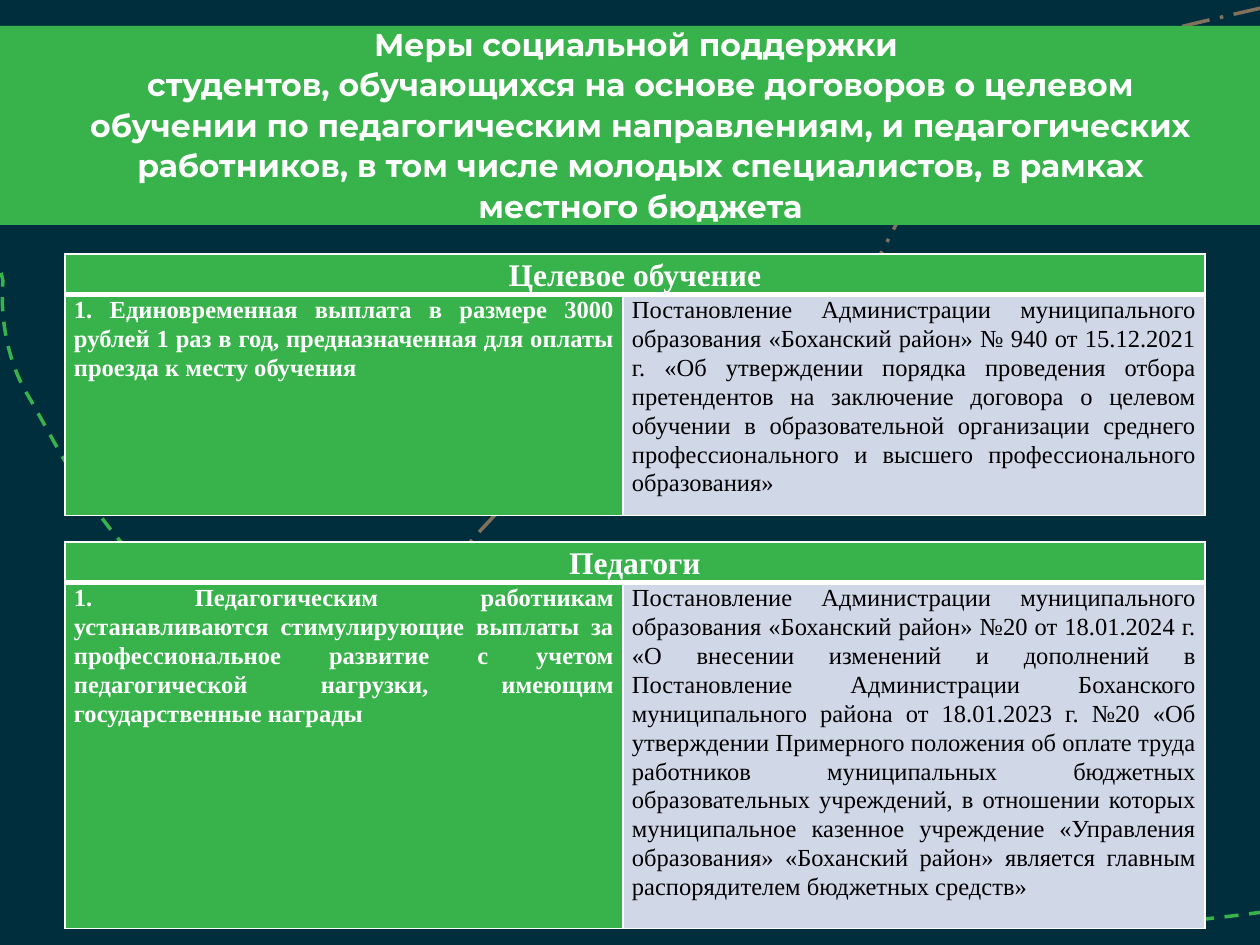
"""Build the slide on support measures for students and teachers."""
from dataclasses import dataclass
from math import cos, radians, sin

from lxml.etree import SubElement
from pptx import Presentation
from pptx.dml.color import RGBColor
from pptx.enum.dml import MSO_LINE
from pptx.enum.shapes import MSO_SHAPE
from pptx.enum.text import MSO_ANCHOR, MSO_AUTO_SIZE, PP_ALIGN
from pptx.oxml.ns import qn
from pptx.shapes.autoshape import Shape
from pptx.slide import Slide
from pptx.table import _Cell as Cell
from pptx.text.text import TextFrame
from pptx.util import Emu, Pt

Point = tuple[float, float]

NAVY = RGBColor(0x00, 0x2E, 0x3D)
GREEN = RGBColor(0x38, 0xB3, 0x4B)
BROWN = RGBColor(0x80, 0x71, 0x5C)
PALE = RGBColor(0xD0, 0xD8, 0xE8)
WHITE = RGBColor(0xFF, 0xFF, 0xFF)
BLACK = RGBColor(0x00, 0x00, 0x00)
SERIF = "Times New Roman"
COLUMNS = (558, 582)
TABLE_LEFT = 65
HEADER_HEIGHT = 40


@dataclass(frozen=True)
class Trail:
    """A dashed chain of Bezier curves, with the turn of its frame."""
    points: tuple[Point, ...]
    color: RGBColor
    dash: MSO_LINE
    turn: float = 0


@dataclass(frozen=True)
class Support:
    """A group of people, its measure and the legal ground."""
    top: int
    body_height: int
    group: str
    measure: str
    ground: str


@dataclass(frozen=True)
class TextStyle:
    """How the text of a box or cell looks."""
    font: str
    size: int
    color: RGBColor
    bold: bool
    align: PP_ALIGN


TITLE_STYLE = TextStyle("Montserrat", 18, WHITE, True, PP_ALIGN.CENTER)
GROUP_STYLE = TextStyle(SERIF, 18, WHITE, True, PP_ALIGN.CENTER)
MEASURE_STYLE = TextStyle(SERIF, 14, WHITE, True, PP_ALIGN.JUSTIFY)
GROUND_STYLE = TextStyle(SERIF, 14, BLACK, False, PP_ALIGN.JUSTIFY)

TITLE = (
    "Меры социальной поддержки \n"
    "студентов, обучающихся на основе договоров о целевом обучении по "
    "педагогическим направлениям, и педагогических работников, в том числе "
    "молодых специалистов, в рамках местного бюджета"
)
TRAILS = (
    Trail(((1261, 8), (1157, 32), (1052, 54), (978, 110), (905, 165), (888, 280),
           (818, 338), (747, 397), (621, 418), (556, 462), (490, 507), (423, 601),
           (423, 601)), BROWN, MSO_LINE.LONG_DASH_DOT, 93.8),
    Trail(((1263, 912), (1172, 924), (1080, 934), (990, 903), (901, 872), (809, 771),
           (725, 727), (641, 682), (576, 656), (486, 634), (396, 612), (261, 635),
           (184, 595), (107, 554), (57, 444), (26, 392), (-4, 339), (3, 281),
           (3, 281), (-1, 262), (0, 277), (0, 277)), GREEN, MSO_LINE.DASH),
)
SUPPORTS = (
    Support(
        254, 221, "Целевое обучение",
        "1. Единовременная выплата в размере 3000 рублей 1 раз в год, "
        "предназначенная для оплаты проезда к месту обучения",
        "Постановление Администрации муниципального образования «Боханский район» "
        "№ 940 от 15.12.2021 г. «Об утверждении порядка проведения отбора "
        "претендентов на заключение договора о целевом обучении в образовательной "
        "организации среднего профессионального и высшего профессионального "
        "образования»"),
    Support(
        542, 346, "Педагоги",
        "1. Педагогическим работникам устанавливаются стимулирующие выплаты за "
        "профессиональное развитие с учетом педагогической нагрузки, имеющим "
        "государственные награды",
        "Постановление Администрации муниципального образования «Боханский район» "
        "№20 от 18.01.2024 г. «О внесении изменений и дополнений в Постановление "
        "Администрации Боханского муниципального района от 18.01.2023 г. №20 «Об "
        "утверждении Примерного положения об оплате труда работников муниципальных "
        "бюджетных образовательных учреждений, в отношении которых муниципальное "
        "казенное учреждение «Управления образования» «Боханский район» является "
        "главным распорядителем бюджетных средств»"),
)


def px(length: float) -> Emu:
    """Turn pixels into EMU."""
    return Emu(round(length * 914400 / 126))


def write(frame: TextFrame, text: str, style: TextStyle) -> None:
    """Put styled text into a frame."""
    frame.text = text
    for paragraph in frame.paragraphs:
        paragraph.alignment = style.align
        paragraph.line_spacing = 1.07
        for run in paragraph.runs:
            run.font.name = style.font
            run.font.size = Pt(style.size)
            run.font.bold = style.bold
            run.font.color.rgb = style.color


def rotate(point: Point, degrees: float) -> Point:
    """Rotate a point about the slide corner."""
    x, y = point
    cosine, sine = cos(radians(degrees)), sin(radians(degrees))
    return x * cosine - y * sine, x * sine + y * cosine


def bend(outline: Shape) -> None:
    """Turn every three line segments into one cubic curve."""
    segments = list(outline.element.iter(qn("a:lnTo")))
    for start in range(0, len(segments), 3):
        cubic = SubElement(segments[start].getparent(), qn("a:cubicBezTo"))
        for segment in segments[start:start + 3]:
            cubic.append(segment[0])
            segment.getparent().remove(segment)


def draw_trail(slide: Slide, trail: Trail) -> None:
    """Draw a dashed trail."""
    first, *rest = [tuple(map(px, rotate(point, -trail.turn))) for point in trail.points]
    builder = slide.shapes.build_freeform(*first)
    builder.add_line_segments(rest, close=False)
    curve = builder.convert_to_shape()
    bend(curve)
    half_width, half_height = curve.width / 2, curve.height / 2
    middle = rotate((curve.left + half_width, curve.top + half_height), trail.turn)
    curve.left = round(middle[0] - half_width)
    curve.top = round(middle[1] - half_height)
    curve.rotation = trail.turn
    curve.shadow.inherit = False
    curve.fill.background()
    curve.line.color.rgb = trail.color
    curve.line.width = Pt(2)
    curve.line.dash_style = trail.dash


def format_cell(cell: Cell, fill: RGBColor, top: int, bottom: int) -> None:
    """Set the borders, margins and fill of a cell."""
    properties = cell._tc.get_or_add_tcPr()
    for side, width in (("L", 1), ("R", 1), ("T", top), ("B", bottom)):
        border = SubElement(properties, qn(f"a:ln{side}"), w=str(Pt(width)))
        solid = SubElement(border, qn("a:solidFill"))
        SubElement(solid, qn("a:srgbClr"), val=str(WHITE))
    cell.margin_left = cell.margin_right = px(9)
    cell.margin_top = cell.margin_bottom = 0
    cell.fill.solid()
    cell.fill.fore_color.rgb = fill


def draw_support(slide: Slide, support: Support) -> None:
    """Draw the table of one group."""
    heights = (HEADER_HEIGHT, support.body_height)
    table = slide.shapes.add_table(2, 2, px(TABLE_LEFT), px(support.top),
                                   px(sum(COLUMNS)), px(sum(heights))).table
    for column, width in zip(table.columns, COLUMNS):
        column.width = px(width)
    for row, height in zip(table.rows, heights):
        row.height = px(height)
    header, spanned = table.cell(0, 0), table.cell(0, 1)
    measure, ground = table.cell(1, 0), table.cell(1, 1)
    header.merge(spanned)
    for cell in (header, spanned):
        format_cell(cell, GREEN, 1, 3)
    format_cell(measure, GREEN, 3, 1)
    format_cell(ground, PALE, 3, 1)
    header.vertical_anchor = MSO_ANCHOR.MIDDLE
    write(header.text_frame, support.group, GROUP_STYLE)
    write(measure.text_frame, support.measure, MEASURE_STYLE)
    write(ground.text_frame, support.ground, GROUND_STYLE)


def draw_heading(slide: Slide) -> None:
    """Draw the green band with the title over it."""
    band = slide.shapes.add_shape(MSO_SHAPE.RECTANGLE, 0, px(26), px(1260), px(199))
    band.shadow.inherit = False
    band.fill.solid()
    band.fill.fore_color.rgb = GREEN
    band.line.fill.background()
    title = slide.shapes.title
    band.element.addnext(title.element)
    title.left, title.top, title.width, title.height = map(px, (55, 16, 1171, 215))
    frame = title.text_frame
    frame.word_wrap = True
    frame.auto_size = MSO_AUTO_SIZE.SHAPE_TO_FIT_TEXT
    frame.vertical_anchor = MSO_ANCHOR.TOP
    write(frame, TITLE, TITLE_STYLE)


def main() -> None:
    """Build and save the presentation."""
    deck = Presentation()
    deck.slide_width, deck.slide_height = px(1260), px(945)
    slide = deck.slides.add_slide(deck.slide_layouts[5])
    slide.background.fill.solid()
    slide.background.fill.fore_color.rgb = NAVY
    for trail in TRAILS:
        draw_trail(slide, trail)
    draw_heading(slide)
    for support in SUPPORTS:
        draw_support(slide, support)
    deck.save("out.pptx")


if __name__ == "__main__":
    main()
